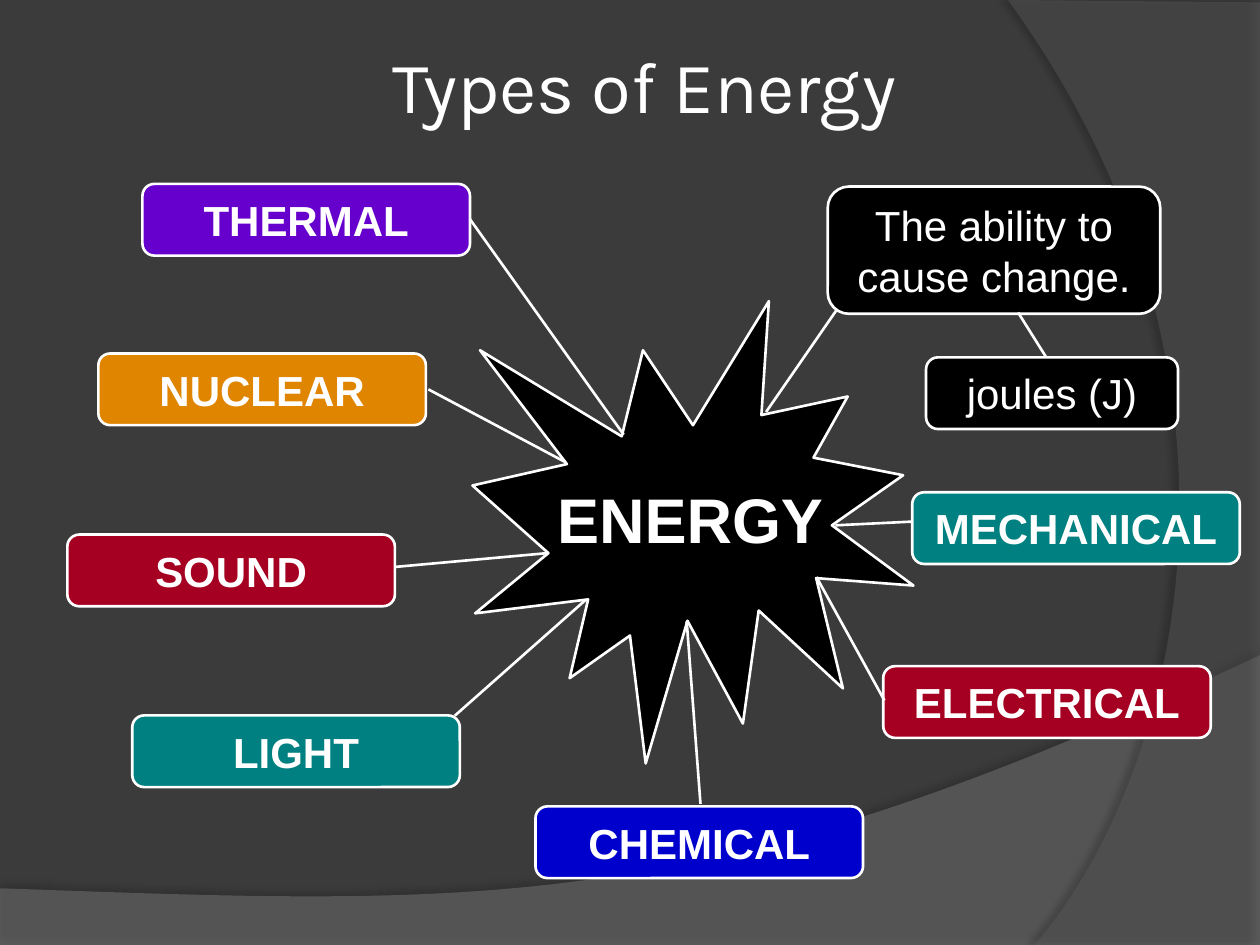
from dataclasses import dataclass

from lxml.etree import SubElement
from pptx import Presentation
from pptx.dml.color import RGBColor
from pptx.enum.shapes import MSO_CONNECTOR, MSO_SHAPE
from pptx.enum.text import MSO_ANCHOR, PP_ALIGN
from pptx.oxml.ns import qn
from pptx.util import Pt

COLORS = {
    "background": "3B3B3B", "floor": "7F7F7F", "side": "5E5E5E",
    "white": "FFFFFF", "black": "000000", "teal": "008080", "red": "A50021",
    "blue": "0000CC", "orange": "E08500", "purple": "6600CC",
}
Point = tuple[float, float]


@dataclass
class Label:
    words: str
    left: float
    top: float
    color: str
    link_start: Point
    link_end: Point
    width: float = 187.2
    height: float = 41
    bold: bool = True


@dataclass
class Swoosh:
    color: str
    opacity: int
    corners: list[Point]
    curve: tuple[Point, Point, Point, Point]
    shadow_opacity: int
    shadow_distance: float
    shadow_angle: int


LABELS = [
    Label("The ability to cause change.", 473, 106.6, "black",
          (437.8, 235.4), (478.1, 177.1), 190, 72.7, False),
    Label("MECHANICAL", 521.3, 281.3, "teal", (477.4, 300.2), (520.6, 298.1)),
    Label("ELECTRICAL", 504.7, 380.7, "red", (466.6, 329.8), (505.4, 400.3)),
    Label("CHEMICAL", 306, 460.8, "blue", (392.4, 355), (400.3, 459.4)),
    Label("NUCLEAR", 56.2, 202, "orange", (323.3, 264.2), (244.8, 222.5)),
    Label("THERMAL", 81.4, 105.1, "purple", (268.6, 125.3), (356.4, 248.4)),
    Label("joules (J)", 529.2, 204.2, "black",
          (597.6, 203.8), (581.8, 178.6), 144, bold=False),
    Label("LIGHT", 75.6, 408.8, "teal", (259.9, 409), (334.8, 342.7)),
    Label("SOUND", 38.5, 305.5, "red", (312.5, 316.1), (225.4, 324)),
]
SWOOSHES = [
    Swoosh("floor", 45, [(0, 540), (720, 540)],
           ((720, 374.4), (402.5, 524.9), (281.5, 517.7), (0, 507.6)), 35, 3.5, 270),
    Swoosh("side", 40, [(720, 1.4), (720, 540)],
           ((591.1, 540), (673.2, 445.7), (733, 216), (576, 0)), 45, 4, 180),
]


def rgb(name: str) -> RGBColor:
    """Look up a palette colour."""
    return RGBColor.from_string(COLORS[name])


def curve_points(curve: tuple[Point, ...], steps: int = 60) -> list[Point]:
    """Sample a cubic Bezier curve at equal parameter steps."""
    points = []
    for step in range(steps + 1):
        t = step / steps
        weights = ((1 - t) ** 3, 3 * t * (1 - t) ** 2, 3 * t * t * (1 - t), t ** 3)
        points.append(tuple(sum(w * p[axis] for w, p in zip(weights, curve))
                            for axis in (0, 1)))
    return points


def draw_swoosh(slide, swoosh: Swoosh) -> None:
    """Draw a translucent curved panel with a soft edge shadow."""
    outline = [(Pt(x), Pt(y)) for x, y in swoosh.corners + curve_points(swoosh.curve)]
    builder = slide.shapes.build_freeform(*outline[0])
    builder.add_line_segments(outline[1:], close=True)
    panel = builder.convert_to_shape()
    panel.fill.solid()
    panel.fill.fore_color.rgb = rgb(swoosh.color)
    panel.line.fill.background()
    panel.shadow.inherit = False
    properties = panel.element.spPr
    fill_color = properties.find(qn("a:solidFill")).find(qn("a:srgbClr"))
    SubElement(fill_color, qn("a:alpha"), val=str(swoosh.opacity * 1000))
    shadow = SubElement(
        properties.find(qn("a:effectLst")), qn("a:outerShdw"), blurRad=str(Pt(4)),
        dist=str(Pt(swoosh.shadow_distance)), dir=str(swoosh.shadow_angle * 60000),
        algn="ctr", rotWithShape="0")
    shadow_color = SubElement(shadow, qn("a:srgbClr"), val=COLORS["black"])
    SubElement(shadow_color, qn("a:alpha"), val=str(swoosh.shadow_opacity * 1000))


def write(shape, words: str, size: float, font: str = "Arial",
          bold: bool = False, wrap: bool = True) -> None:
    """Set centred white text in a shape."""
    frame = shape.text_frame
    frame.word_wrap = wrap
    frame.vertical_anchor = MSO_ANCHOR.MIDDLE
    paragraph = frame.paragraphs[0]
    paragraph.text = words
    paragraph.alignment = PP_ALIGN.CENTER
    paragraph.font.name = font
    paragraph.font.size = Pt(size)
    paragraph.font.bold = bold
    paragraph.font.color.rgb = rgb("white")


def draw_outlined(slide, kind: MSO_SHAPE, left: float, top: float,
                  width: float, height: float, color: str):
    """Draw a filled shape with a white outline."""
    shape = slide.shapes.add_shape(kind, Pt(left), Pt(top), Pt(width), Pt(height))
    shape.shadow.inherit = False
    shape.fill.solid()
    shape.fill.fore_color.rgb = rgb(color)
    shape.line.color.rgb = rgb("white")
    shape.line.width = Pt(1.5)
    return shape


def draw_label(slide, label: Label) -> None:
    """Draw a rounded label and its link line."""
    box = draw_outlined(slide, MSO_SHAPE.ROUNDED_RECTANGLE, label.left, label.top,
                        label.width, label.height, label.color)
    write(box, label.words, 24, bold=label.bold)
    link = slide.shapes.add_connector(
        MSO_CONNECTOR.STRAIGHT, *map(Pt, label.link_start + label.link_end))
    link.line.color.rgb = rgb("white")
    link.line.width = Pt(1.5)
    SubElement(link.element.spPr, qn("a:effectLst"))


def main() -> None:
    """Build the energy types slide."""
    presentation = Presentation()
    presentation.slide_width, presentation.slide_height = Pt(720), Pt(540)
    slide = presentation.slides.add_slide(presentation.slide_layouts[6])
    slide.background.fill.solid()
    slide.background.fill.fore_color.rgb = rgb("background")
    for swoosh in SWOOSHES:
        draw_swoosh(slide, swoosh)
    title = slide.shapes.add_textbox(Pt(24.5), Pt(18), Pt(677.5), Pt(60))
    write(title, " Types of Energy", 41.4, font="Karla")
    burst = draw_outlined(slide, MSO_SHAPE.EXPLOSION1, 270, 172.1, 252, 264.2, "black")
    write(burst, "ENERGY", 36, bold=True, wrap=False)
    for label in LABELS:
        draw_label(slide, label)
    presentation.save("out.pptx")


if __name__ == "__main__":
    main()
